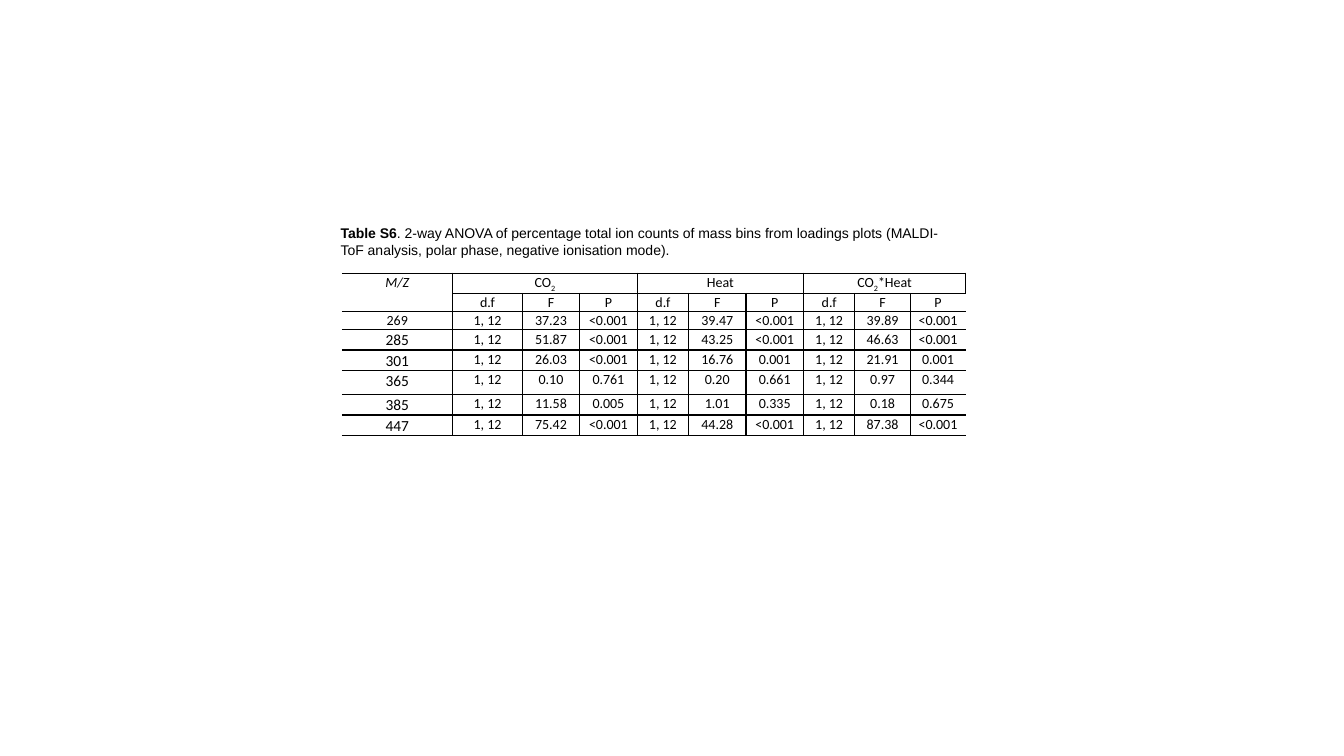
from dataclasses import dataclass

import pptx
import pptx.dml.color
import pptx.enum.text
import pptx.oxml
import pptx.oxml.ns
import pptx.util

Inches = pptx.util.Inches
Pt = pptx.util.Pt


@dataclass(frozen=True)
class Theme:
    ink: str = "000000"
    sans: str = "Arial"
    body: str = "Calibri"
    size: float = 10
    large: float = 11
    rule: float = 1


THEME = Theme()
WIDTHS = [1.1, 0.69, 0.57, 0.57, 0.51, 0.57, 0.57, 0.51, 0.55, 0.55]
HEIGHTS = [0.2, 0.18, 0.18, 0.2, 0.2, 0.24, 0.2, 0.2]
GROUPS = ["CO₂", "Heat", "CO₂*Heat"]
DF = "1, 12"
# Each mass bin is followed by F and P for every group.
BINS = [
    ("269", "37.23", "<0.001", "39.47", "<0.001", "39.89", "<0.001"),
    ("285", "51.87", "<0.001", "43.25", "<0.001", "46.63", "<0.001"),
    ("301", "26.03", "<0.001", "16.76", "0.001", "21.91", "0.001"),
    ("365", "0.10", "0.761", "0.20", "0.661", "0.97", "0.344"),
    ("385", "11.58", "0.005", "1.01", "0.335", "0.18", "0.675"),
    ("447", "75.42", "<0.001", "44.28", "<0.001", "87.38", "<0.001"),
]


def style(para, face, size):
    font = para.font
    font.name, font.size = face, Pt(size)
    font.color.rgb = pptx.dml.color.RGBColor.from_string(THEME.ink)


def add_runs(para, text):
    """Write text, turning each ₂ into a subscript run."""
    for index, part in enumerate(text.split("₂")):
        if index:
            sub = para.add_run()
            sub.text = "2"
            sub._r.get_or_add_rPr().set("baseline", "-25000")
        if part:
            para.add_run().text = part


def set_edges(cell, drawn):
    """Rule the named sides of a cell and leave the others open."""
    props = cell._tc.get_or_add_tcPr()
    for side in "LRTB":
        fill = (f'<a:solidFill><a:srgbClr val="{THEME.ink}"/></a:solidFill>'
                if side in drawn else "<a:noFill/>")
        props.append(pptx.oxml.parse_xml(
            f'<a:ln{side} {pptx.oxml.ns.nsdecls("a")} '
            f'w="{Pt(THEME.rule)}">{fill}</a:ln{side}>'))


def fill_cell(cell, text, size):
    cell.margin_left = cell.margin_right = Inches(0.07)
    cell.margin_top = cell.margin_bottom = 0
    cell.fill.background()
    para = cell.text_frame.paragraphs[0]
    para.alignment = pptx.enum.text.PP_ALIGN.CENTER
    para.line_spacing = 1.07
    style(para, THEME.body, size)
    add_runs(para, text)


def table_rows():
    top, heads = ["M/Z"], [""]
    for group in GROUPS:
        top += [group, "", ""]
        heads += ["d.f", "F", "P"]
    rows = [top, heads]
    for mass, *stats in BINS:
        row = [mass]
        for at in range(0, len(stats), 2):
            row += [DF, *stats[at:at + 2]]
        rows.append(row)
    return rows


def add_anova(slide):
    rows = table_rows()
    frame = slide.shapes.add_table(
        len(rows), len(WIDTHS), Inches(3.39), Inches(2.71),
        Inches(sum(WIDTHS)), Inches(sum(HEIGHTS)))
    table = frame.table
    table.first_row = table.horz_banding = False
    for column, width in zip(table.columns, WIDTHS):
        column.width = Inches(width)
    for row, height in zip(table.rows, HEIGHTS):
        row.height = Inches(height)

    last = len(WIDTHS) - 1
    for r, row in enumerate(rows):
        for c, text in enumerate(row):
            cell = table.cell(r, c)
            sides = "TB" + ("L" if c > 0 else "") + ("R" if c < last else "")
            set_edges(cell, sides)
            large = c == 0 and r > 2
            fill_cell(cell, text, THEME.large if large else THEME.size)

    table.cell(0, 0).text_frame.paragraphs[0].font.italic = True
    table.cell(0, 0).merge(table.cell(1, 0))
    for c in range(1, len(WIDTHS), 3):
        table.cell(0, c).merge(table.cell(0, c + 2))


def add_caption(slide, label, text):
    box = slide.shapes.add_textbox(
        Inches(3.28), Inches(2.18), Inches(6.33), Inches(0.44))
    box.text_frame.word_wrap = True
    para = box.text_frame.paragraphs[0]
    style(para, THEME.sans, THEME.size)
    lead = para.add_run()
    lead.text = label
    lead.font.bold = True
    para.add_run().text = text


def main():
    deck = pptx.Presentation()
    deck.slide_width, deck.slide_height = Inches(13.33), Inches(7.5)
    slide = deck.slides.add_slide(deck.slide_layouts[6])
    add_anova(slide)
    add_caption(
        slide, "Table S6",
        ". 2-way ANOVA of percentage total ion counts of mass bins from "
        "loadings plots (MALDI-ToF analysis, polar phase, negative "
        "ionisation mode).")
    deck.save("out.pptx")


if __name__ == "__main__":
    main()
